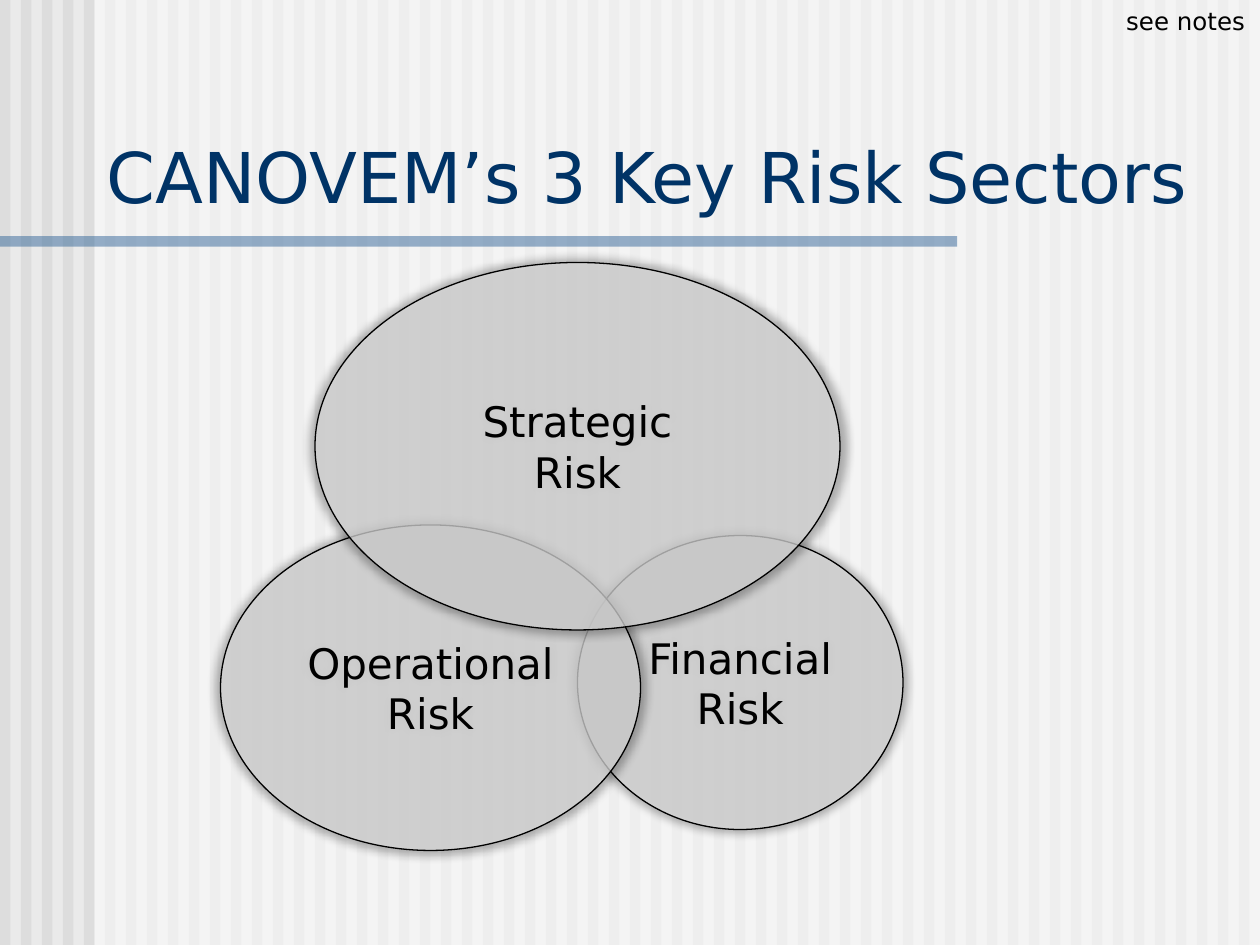
from lxml.etree import SubElement as Sub
from pptx import Presentation
from pptx.dml.color import RGBColor as RGB
from pptx.enum.shapes import MSO_SHAPE as Form
from pptx.enum.text import MSO_ANCHOR as Anchor, PP_ALIGN as Align
from pptx.oxml.ns import qn
from pptx.util import Pt

PAPER = RGB(0xEA, 0xEA, 0xEA)
GREY = RGB(0xDD, 0xDD, 0xDD)
WHITE = RGB(0xFF, 0xFF, 0xFF)
BLUE = RGB(0x33, 0x66, 0x99)
NAVY = RGB(0x00, 0x33, 0x66)
BLACK = RGB(0x00, 0x00, 0x00)


class Deck:
    font = "DejaVu Sans"

    def __init__(self, wide, high):
        self.prs = Presentation()
        self.prs.slide_width, self.prs.slide_height = Pt(wide), Pt(high)
        self.slide = self.prs.slides.add_slide(self.prs.slide_layouts[6])
        back = self.slide.background.fill
        back.solid()
        back.fore_color.rgb = PAPER

    def shape(self, form, box, color, alpha=100):
        item = self.slide.shapes.add_shape(form, *map(Pt, box))
        item.shadow.inherit = False
        item.fill.solid()
        item.fill.fore_color.rgb = color
        item.line.fill.background()
        if alpha < 100:
            tone = item._element.spPr.find(qn("a:solidFill"))[0]
            Sub(tone, qn("a:alpha"), val=str(alpha * 1000))
        return item

    def label(self, item, lines, size, color, align=Align.LEFT, **frame):
        body = item.text_frame
        for key, val in frame.items():
            setattr(body, key, val)
        body.text = "\n".join(lines)
        look = {"size": Pt(size), "name": self.font}
        for para in body.paragraphs:
            para.alignment = align
            for key, val in look.items():
                setattr(para.font, key, val)
            para.font.color.rgb = color

    def text(self, box, line, size, color, **frame):
        item = self.slide.shapes.add_textbox(*map(Pt, box))
        self.label(item, [line], size, color, **frame)

    def glow(self, item):
        # Soft dark halo, spread evenly around the shape
        effects = item._element.spPr.find(qn("a:effectLst"))
        halo = Sub(effects, qn("a:outerShdw"), blurRad=str(Pt(5)),
                   sx="102000", sy="102000", algn="ctr", rotWithShape="0")
        tone = Sub(halo, qn("a:srgbClr"), val=str(BLACK))
        Sub(tone, qn("a:alpha"), val="40000")

    def oval(self, box, lines):
        item = self.shape(Form.OVAL, box, GREY, 72)
        item.line.color.rgb = BLACK
        item.line.width = Pt(0.75)
        self.glow(item)
        self.label(item, lines, 24, BLACK, Align.CENTER,
                   vertical_anchor=Anchor.MIDDLE, word_wrap=False)

    def save(self):
        self.prs.save("out.pptx")


def main():
    deck = Deck(720, 540)

    # Striped ground, veil and rule
    for left in range(0, 720, 12):
        deck.shape(Form.RECTANGLE, (left, 0, 6, 540), GREY)
    deck.shape(Form.RECTANGLE, (54, 0, 666, 540), WHITE, 50)
    deck.shape(Form.RECTANGLE, (0, 135, 547, 6), BLUE, 50)

    # Title
    deck.text((54, 73, 643, 55), "CANOVEM’s 3 Key Risk Sectors", 40, NAVY,
              vertical_anchor=Anchor.BOTTOM, word_wrap=True)

    # Overlapping risk sectors, back to front
    sectors = [
        ("Financial", (330, 306, 186, 168)),
        ("Operational", (126, 300, 240, 186)),
        ("Strategic", (180, 150, 300, 210)),
    ]
    for name, box in sectors:
        deck.oval(box, [name, "Risk"])

    # Corner remark
    deck.text((636.5, 0, 83, 24.5), "see notes", 14, BLACK, word_wrap=False)

    deck.save()


if __name__ == "__main__":
    main()
